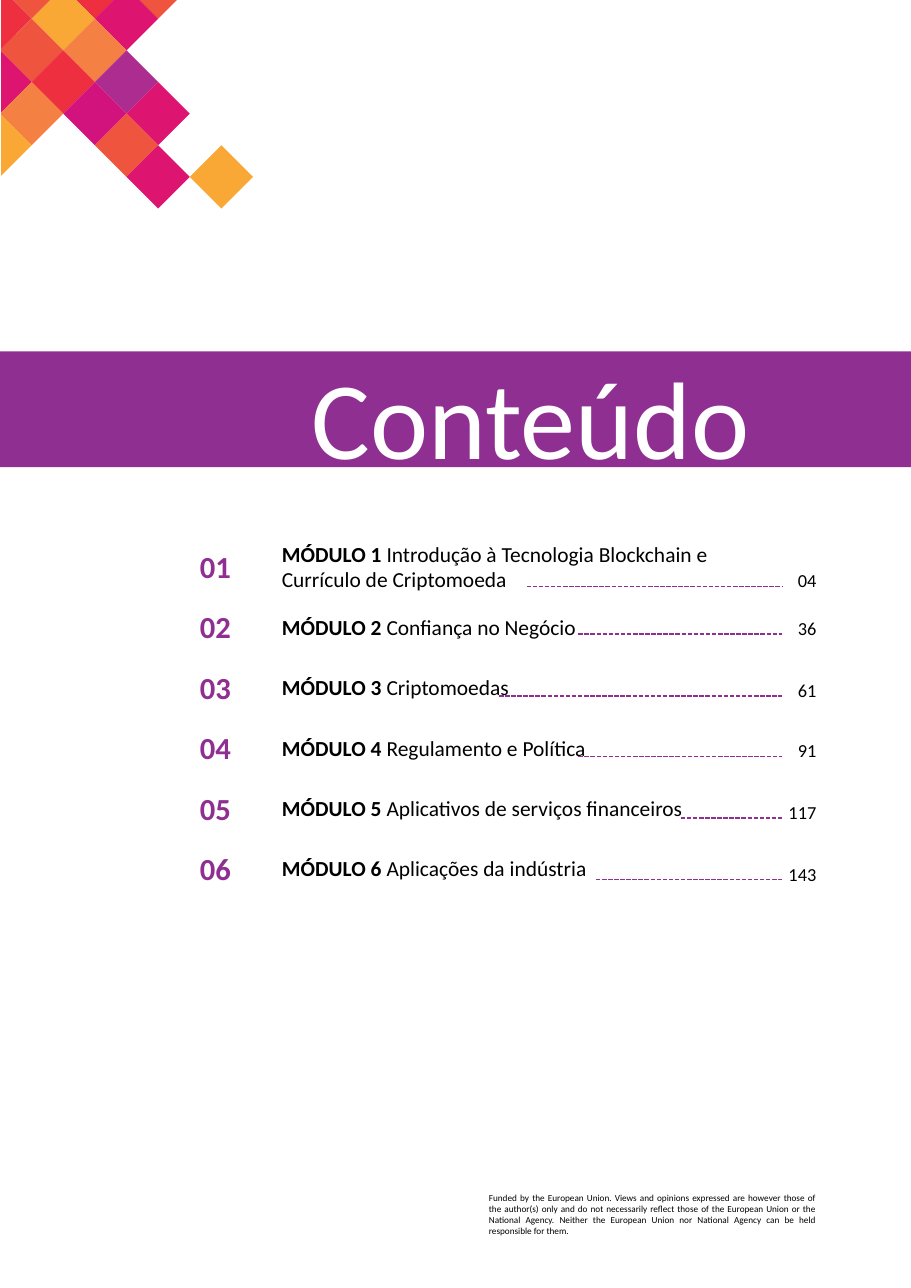
from lxml import etree
from pptx import Presentation
from pptx.dml.color import RGBColor
from pptx.enum.dml import MSO_LINE
from pptx.enum.shapes import MSO_CONNECTOR, MSO_SHAPE
from pptx.enum.text import MSO_ANCHOR, PP_ALIGN
from pptx.oxml.ns import qn
from pptx.util import Inches, Pt

RECTANGLE = MSO_SHAPE.RECTANGLE
STRAIGHT = MSO_CONNECTOR.STRAIGHT
DASH = MSO_LINE.SQUARE_DOT
TOP, MIDDLE = MSO_ANCHOR.TOP, MSO_ANCHOR.MIDDLE
LEFT, CENTER = PP_ALIGN.LEFT, PP_ALIGN.CENTER
RIGHT, JUSTIFY = PP_ALIGN.RIGHT, PP_ALIGN.JUSTIFY

FONT = "Calibri"
PURPLE = RGBColor(0x8E, 0x2F, 0x91)
WHITE = RGBColor(0xFF, 0xFF, 0xFF)
BLACK = RGBColor(0x00, 0x00, 0x00)
RED = RGBColor(0xED, 0x2F, 0x40)
PINK = RGBColor(0xDD, 0x14, 0x70)
MAGENTA = RGBColor(0xD3, 0x13, 0x7D)
VIOLET = RGBColor(0xAC, 0x2C, 0x90)
CORAL = RGBColor(0xEF, 0x54, 0x3F)
ORANGE = RGBColor(0xF4, 0x80, 0x43)
AMBER = RGBColor(0xF9, 0xA8, 0x35)

# Content
TITLE = "Conteúdo"
FUNDING = (
    "Funded by the European Union. Views and opinions expressed are however "
    "those of the author(s) only and do not necessarily reflect those of the "
    "European Union or the National Agency. Neither the European Union nor "
    "National Agency can be held responsible for them."
)
# Module title, page, left end of the leader, top of the page number
MODULES = [
    ("Introdução à Tecnologia Blockchain e Currículo de Criptomoeda", "04", 4.78, 5.08),
    ("Confiança no Negócio", "36", 5.25, 5.51),
    ("Criptomoedas", "61", 4.53, 6.07),
    ("Regulamento e Política", "91", 5.25, 6.62),
    ("Aplicativos de serviços financeiros", "117", 6.18, 7.18),
    ("Aplicações da indústria", "143", 5.41, 7.74),
]
# Mosaic tiles: grid column, grid row, colour
TILES = [
    (1, -1, CORAL), (3, -1, RED), (5, -1, CORAL),
    (0, 0, RED), (2, 0, AMBER), (4, 0, PINK),
    (1, 1, CORAL), (3, 1, ORANGE),
    (0, 2, PINK), (2, 2, RED), (4, 2, VIOLET),
    (1, 3, ORANGE), (3, 3, MAGENTA), (5, 3, PINK),
    (0, 4, AMBER), (4, 4, CORAL),
    (5, 5, PINK), (7, 5, AMBER),
]

# Layout, in inches
PAGE_WIDTH, PAGE_HEIGHT = 8.27, 11.69
TILE_STEP = 2.01 / 7
MOSAIC_TOP = 0.17
MOSAIC_EDGES = (0.01, 0)
ROW_TOP, ROW_STEP, ROW_HEIGHT = 4.95, 0.548, 0.38
LEADER_END, LEADER_DROP = 7.1, 0.245


def clip(points, axis, limit):
    """Keep the part of a polygon at or beyond limit on one axis."""
    kept = []
    for start, end in zip(points, points[1:] + points[:1]):
        if start[axis] >= limit:
            kept.append(start)
        if (start[axis] > limit) != (end[axis] > limit) and limit not in (start[axis], end[axis]):
            share = (limit - start[axis]) / (end[axis] - start[axis])
            kept.append(tuple(a + share * (b - a) for a, b in zip(start, end)))
    return kept


def paint(shape, color):
    shape.shadow.inherit = False
    shape.fill.solid()
    shape.fill.fore_color.rgb = color
    shape.line.fill.background()


def add_tile(slide, column, row, color):
    x, y = column * TILE_STEP, MOSAIC_TOP + row * TILE_STEP
    points = [(x, y - TILE_STEP), (x + TILE_STEP, y), (x, y + TILE_STEP), (x - TILE_STEP, y)]
    for axis, limit in enumerate(MOSAIC_EDGES):
        points = clip(points, axis, limit)
    corners = [(Inches(px), Inches(py)) for px, py in points]
    builder = slide.shapes.build_freeform(*corners[0])
    builder.add_line_segments(corners[1:], close=True)
    paint(builder.convert_to_shape(), color)


def add_text(slide, box, runs, size, color=BLACK, align=LEFT, anchor=MIDDLE):
    """Add a text box; runs are (text, bold) pairs."""
    frame = slide.shapes.add_textbox(*map(Inches, box)).text_frame
    frame.word_wrap = True
    frame.vertical_anchor = anchor
    paragraph = frame.paragraphs[0]
    paragraph.alignment = align
    for text, bold in runs:
        run = paragraph.add_run()
        run.text = text
        run.font.name = FONT
        run.font.size = Pt(size)
        run.font.bold = bold
        run.font.color.rgb = color


def add_leader(slide, start, end, y):
    line = slide.shapes.add_connector(STRAIGHT, Inches(start), Inches(y), Inches(end), Inches(y))
    line.line.color.rgb = PURPLE
    line.line.width = Pt(1)
    line.line.dash_style = DASH
    etree.SubElement(line._element.spPr, qn("a:effectLst"))


def main():
    presentation = Presentation()
    presentation.slide_width = Inches(PAGE_WIDTH)
    presentation.slide_height = Inches(PAGE_HEIGHT)
    slide = presentation.slides.add_slide(presentation.slide_layouts[6])

    # Title band, funding note and mosaic
    band = slide.shapes.add_shape(RECTANGLE, 0, Inches(3.19), Inches(PAGE_WIDTH), Inches(1.05))
    paint(band, PURPLE)
    add_text(slide, (4.34, 10.77, 3.16, 0.5), [(FUNDING, False)], 6, align=JUSTIFY, anchor=TOP)
    for column, row, color in TILES:
        add_tile(slide, column, row, color)
    add_text(slide, (2.73, 3.12, 5.1, 1.54), [(TITLE, False)], 72, WHITE, anchor=TOP)

    # Table of contents
    for index, (name, page, leader_start, page_top) in enumerate(MODULES):
        number = index + 1
        top = ROW_TOP + index * ROW_STEP
        add_text(slide, (1.6, top, 0.71, ROW_HEIGHT), [(f"{number:02}", True)], 20, PURPLE, CENTER)
        add_text(slide, (2.46, top, 4.35, ROW_HEIGHT),
                 [(f"MÓDULO {number} ", True), (name, False)], 14)
        add_text(slide, (7.01, page_top, 0.5, ROW_HEIGHT), [(page, False)], 12, align=RIGHT)
        add_leader(slide, leader_start, LEADER_END, page_top + LEADER_DROP)

    presentation.save("out.pptx")


if __name__ == "__main__":
    main()
